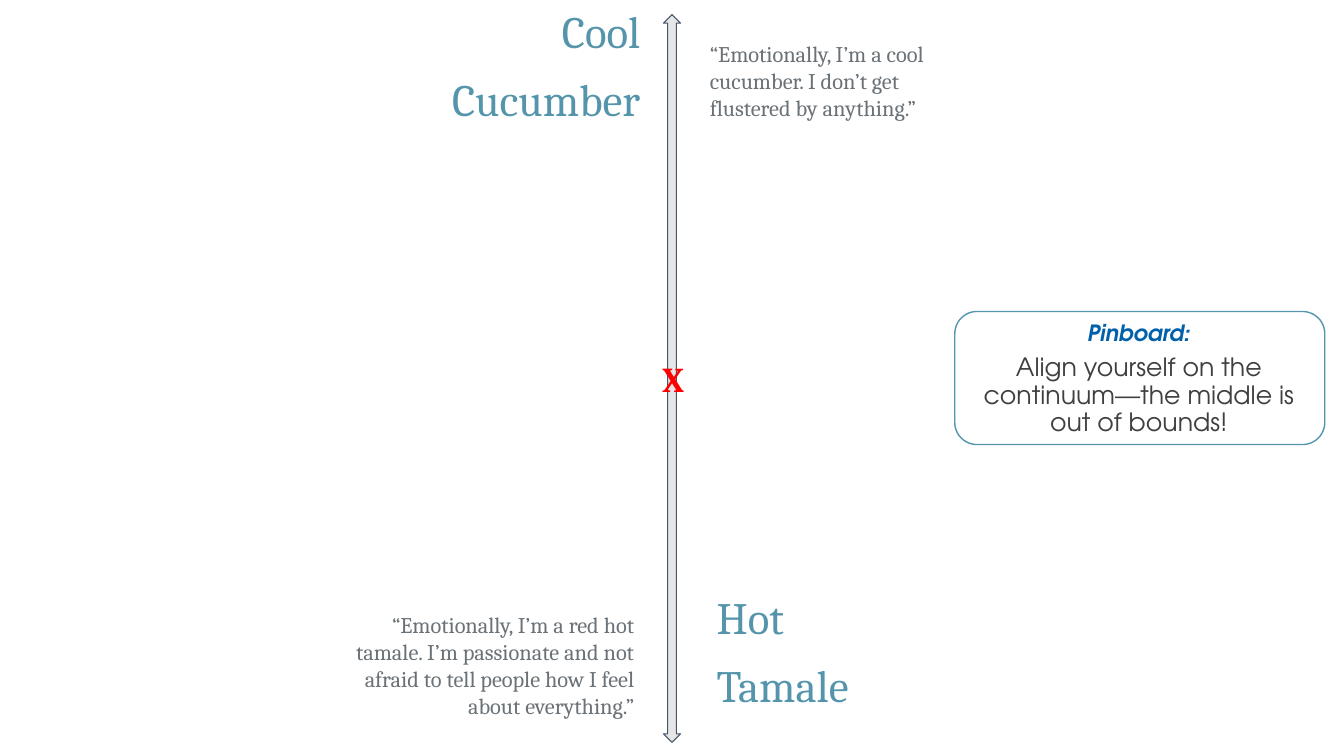
from dataclasses import dataclass

import pptx
import pptx.dml.color
import pptx.enum.shapes
import pptx.enum.text
import pptx.util

RGBColor = pptx.dml.color.RGBColor
Align = pptx.enum.text.PP_ALIGN
Anchor = pptx.enum.text.MSO_ANCHOR
Preset = pptx.enum.shapes.MSO_SHAPE
Inches = pptx.util.Inches
Pt = pptx.util.Pt

SLIDE_WIDTH = Inches(13.33)
SLIDE_HEIGHT = Inches(7.5)
COLUMNS = ROWS = 100

RED = RGBColor(0xFF, 0x00, 0x00)
SLATE = RGBColor(0x6A, 0x72, 0x78)
TEAL = RGBColor(0x55, 0x95, 0xAC)
BORDER_TEAL = RGBColor(0x54, 0x96, 0xAD)
NAVY = RGBColor(0x44, 0x54, 0x6A)
PALE_GREY = RGBColor(0xE7, 0xE6, 0xE6)
BLUE = RGBColor(0x00, 0x61, 0xAA)
CHARCOAL = RGBColor(0x3F, 0x3F, 0x3F)

SERIF = "Cambria"
SANS = "TeX Gyre Adventor"


@dataclass(frozen=True)
class Area:
    column: float
    row: float
    columns: float
    rows: float

    def box(self) -> tuple[int, int, int, int]:
        return (
            round(self.column * SLIDE_WIDTH / COLUMNS),
            round(self.row * SLIDE_HEIGHT / ROWS),
            round(self.columns * SLIDE_WIDTH / COLUMNS),
            round(self.rows * SLIDE_HEIGHT / ROWS),
        )


@dataclass(frozen=True)
class Style:
    size: float
    color: RGBColor
    font: str = SERIF
    bold: bool = False
    italic: bool = False
    before: float = 0
    spacing: float = 1.0
    hanging: bool = False


@dataclass(frozen=True)
class Passage:
    area: Area
    lines: tuple[tuple[str, Style], ...]
    align: Align
    anchor: Anchor = Anchor.TOP
    side_margin: float = 0.1
    end_margin: float = 0.05


MARKER_STYLE = Style(25, RED, bold=True)
QUOTE_STYLE = Style(16, SLATE)
POLE_STYLE = Style(32, TEAL, before=10, hanging=True)
HEADING_STYLE = Style(16, BLUE, SANS, bold=True, italic=True, spacing=0.9)
TASK_STYLE = Style(18, CHARCOAL, SANS, before=6, spacing=0.9)

CONTINUUM = Area(22.92, 48.93, 54.16, 2.27)
TASK_FRAME = Area(71.04, 41.2, 27.53, 17.6)


def centred(area: Area, text: str, style: Style, align: Align) -> Passage:
    return Passage(area, ((text, style),), align, Anchor.MIDDLE, 0.13, 0.13)


def pole(area: Area, words: tuple[str, ...], align: Align) -> Passage:
    return Passage(area, tuple((word, POLE_STYLE) for word in words), align)


MIDPOINT = centred(Area(48.31, 45.6, 3.38, 8.8), "X", MARKER_STYLE, Align.CENTER)
ENDS = (
    centred(
        Area(51.84, 6.27, 21.9, 8.8),
        "“Emotionally, I’m a cool cucumber. I don’t get flustered by anything.”",
        QUOTE_STYLE,
        Align.LEFT,
    ),
    centred(
        Area(24.61, 83.6, 23.56, 8.8),
        "“Emotionally, I’m a red hot tamale. I’m passionate and not afraid "
        "to tell people how I feel about everything.”",
        QUOTE_STYLE,
        Align.RIGHT,
    ),
    pole(Area(24.61, -0.13, 23.78, 21.47), ("Cool", "Cucumber"), Align.RIGHT),
    pole(Area(50.71, 77.33, 23.78, 20.8), ("Hot", "Tamale"), Align.LEFT),
)
TASK = Passage(
    Area(70.97, 42, 27.53, 12.8),
    (
        ("Pinboard:", HEADING_STYLE),
        ("Align yourself on the continuum—the middle is out of bounds!", TASK_STYLE),
    ),
    Align.CENTER,
)


def write(holder: pptx.shapes.base.BaseShape, passage: Passage) -> None:
    holder.left, holder.top, holder.width, holder.height = passage.area.box()
    frame = holder.text_frame
    frame.text = "\n".join(text for text, _ in passage.lines)
    frame.word_wrap = True
    frame.auto_size = pptx.enum.text.MSO_AUTO_SIZE.NONE
    frame.vertical_anchor = passage.anchor
    frame.margin_left = frame.margin_right = Inches(passage.side_margin)
    frame.margin_top = frame.margin_bottom = Inches(passage.end_margin)
    for paragraph, (_, style) in zip(frame.paragraphs, passage.lines):
        paragraph.alignment = passage.align
        paragraph.space_before = Pt(style.before)
        paragraph.line_spacing = style.spacing
        if style.hanging:
            properties = paragraph._p.get_or_add_pPr()
            properties.set("marL", str(Inches(0.5)))
            properties.set("indent", str(Inches(-0.25)))
        for run in paragraph.runs:
            run.font.name = style.font
            run.font.size = Pt(style.size)
            run.font.bold = style.bold
            run.font.italic = style.italic
            run.font.color.rgb = style.color


def outline(
    shape: pptx.shapes.autoshape.Shape, color: RGBColor, width: float
) -> None:
    shape.shadow.inherit = False
    shape.line.color.rgb = color
    shape.line.width = Pt(width)


def draw_continuum(slide: pptx.slide.Slide) -> None:
    arrow = slide.shapes.add_shape(Preset.LEFT_RIGHT_ARROW, *CONTINUUM.box())
    arrow.rotation = 90
    arrow.fill.solid()
    arrow.fill.fore_color.rgb = PALE_GREY
    outline(arrow, NAVY, 0.75)


def draw_midpoint(slide: pptx.slide.Slide) -> None:
    slide.shapes.title.element.getparent().remove(slide.shapes.title.element)
    marker = slide.placeholders[1]
    write(marker, MIDPOINT)
    slide.shapes._spTree.append(marker.element)


def draw_task(slide: pptx.slide.Slide) -> None:
    group = slide.shapes.add_group_shape()
    border = group.shapes.add_shape(Preset.ROUNDED_RECTANGLE, *TASK_FRAME.box())
    border.fill.background()
    outline(border, BORDER_TEAL, 1)
    write(group.shapes.add_textbox(*TASK.area.box()), TASK)


def main() -> None:
    deck = pptx.Presentation()
    deck.slide_width = SLIDE_WIDTH
    deck.slide_height = SLIDE_HEIGHT
    slide = deck.slides.add_slide(deck.slide_layouts[0])
    draw_continuum(slide)
    draw_midpoint(slide)
    for passage in ENDS:
        write(slide.shapes.add_textbox(*passage.area.box()), passage)
    draw_task(slide)
    deck.save("out.pptx")


if __name__ == "__main__":
    main()
